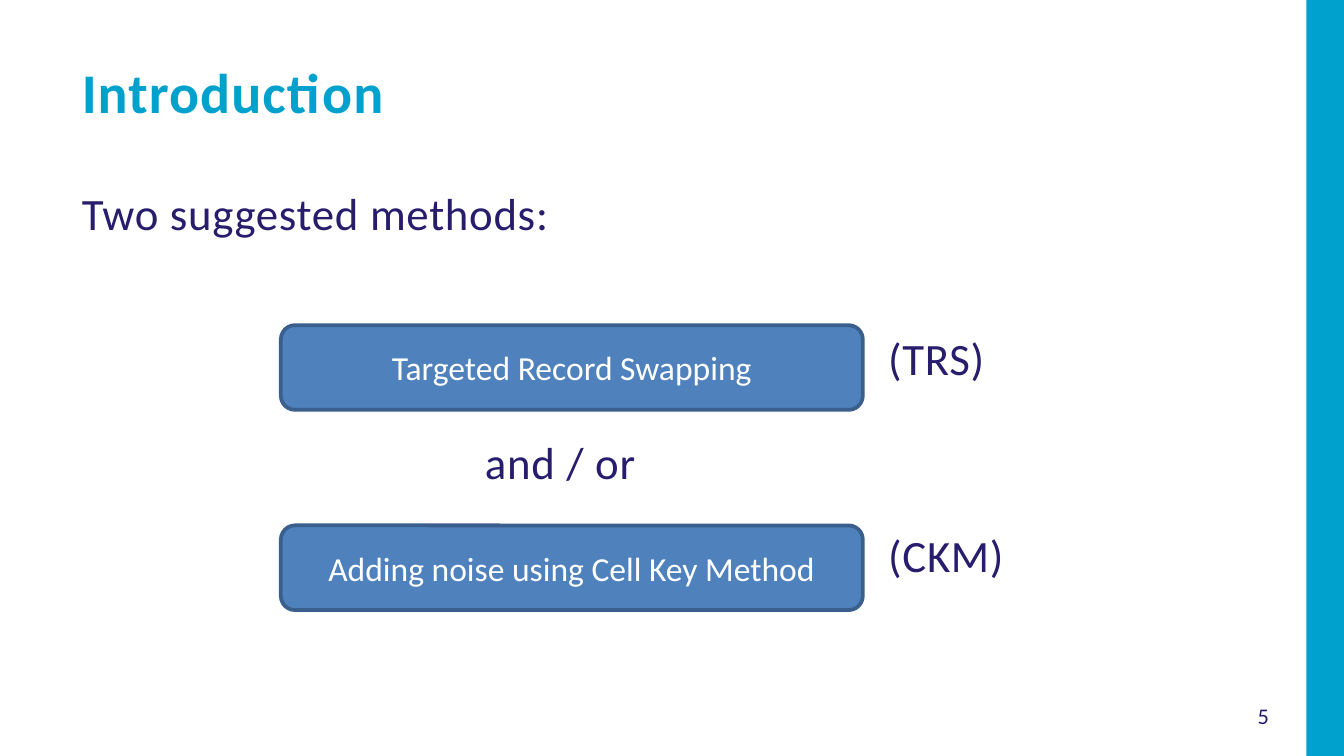
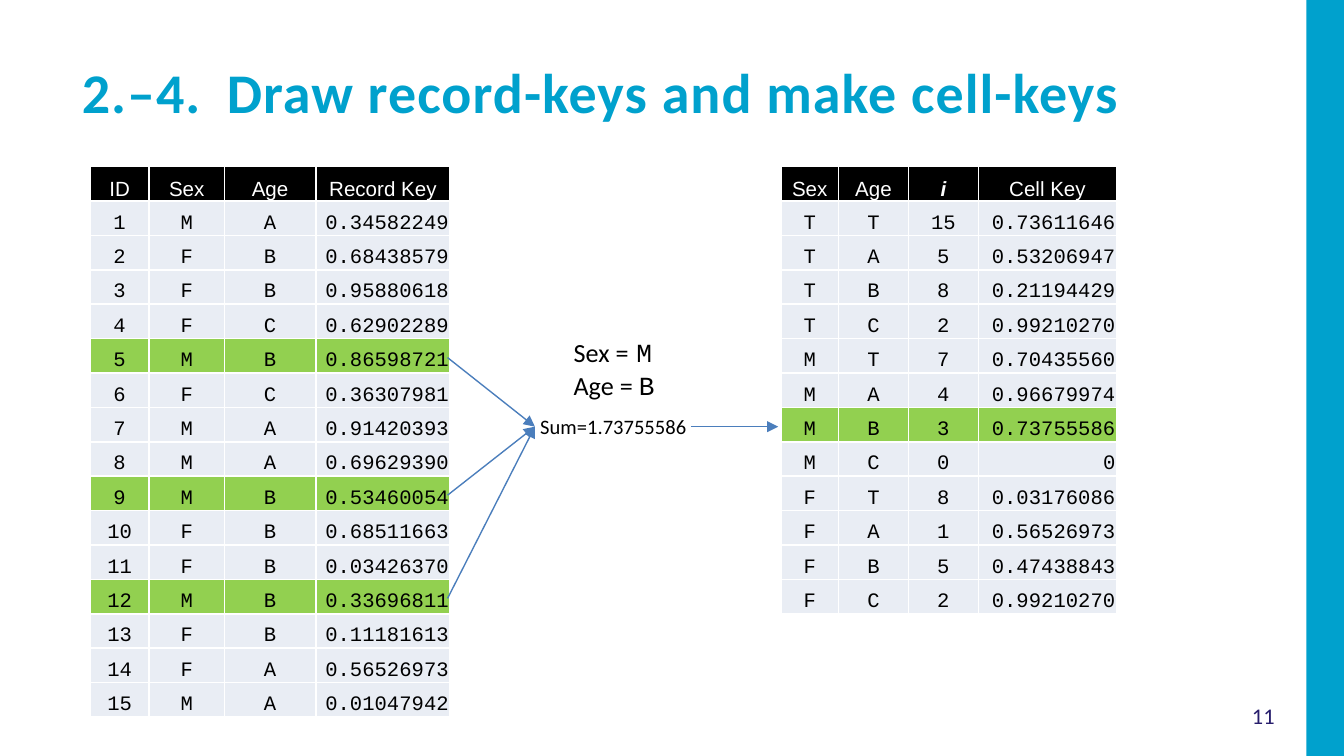
from dataclasses import dataclass

from lxml import etree
from pptx import Presentation
from pptx import util as u
from pptx.dml.color import RGBColor
from pptx.enum import shapes, text
from pptx.oxml import ns


@dataclass(frozen=True)
class Theme:
    cyan: str = "00A1CD"
    navy: str = "271D6C"
    blue: str = "4F81BD"
    blue_edge: str = "3A5F8C"
    arrow: str = "4B7EBC"
    pale: str = "E9EDF4"
    green: str = "92D050"
    white: str = "FFFFFF"
    black: str = "000000"
    body_font: str = "Calibri"
    head_font: str = "Arial"
    data_font: str = "Courier New"
    title: int = 30
    lead: int = 24
    box: int = 18
    note: int = 14
    page: int = 12
    data: int = 11


T = Theme()
WIDTH, HEIGHT = u.Inches(10), u.Inches(5.625)
COLUMNS = 100
UNIT = WIDTH // COLUMNS
FULL_ROWS = HEIGHT / UNIT
CENTER, LEFT, RIGHT = text.PP_ALIGN.CENTER, text.PP_ALIGN.LEFT, text.PP_ALIGN.RIGHT
TEXT_LEFT, TEXT_WIDTH = 5.1, 83.5
TABLE_TOP, ROW_HEIGHT = 12.4, 2.56

RECORDS = """
1 M A 0.34582249
2 F B 0.68438579
3 F B 0.95880618
4 F C 0.62902289
5 M B 0.86598721
6 F C 0.36307981
7 M A 0.91420393
8 M A 0.69629390
9 M B 0.53460054
10 F B 0.68511663
11 F B 0.03426370
12 M B 0.33696811
13 F B 0.11181613
14 F A 0.56526973
15 M A 0.01047942
"""
CELLS = """
T T 15 0.73611646
T A 5 0.53206947
T B 8 0.21194429
T C 2 0.99210270
M T 7 0.70435560
M A 4 0.96679974
M B 3 0.73755586
M C 0 0
F T 8 0.03176086
F A 1 0.56526973
F B 5 0.47438843
F C 2 0.99210270
"""


def grid(*cells):
    return [u.Emu(round(cell * UNIT)) for cell in cells]


def rgb(code):
    return RGBColor.from_string(code)


def write(paragraph, words, size, color=T.black, font=T.body_font, bold=False,
          italic=False, align=None, spacing=0, before=0, indent=0, tab=0):
    props = paragraph._p.get_or_add_pPr()
    if indent:
        props.set("marL", str(grid(indent)[0]))
    if tab:
        stops = etree.SubElement(props, ns.qn("a:tabLst"))
        etree.SubElement(stops, ns.qn("a:tab"), pos=str(grid(tab)[0]), algn="l")
    if align is not None:
        paragraph.alignment = align
    if before:
        paragraph.space_before = u.Pt(before)
    run = paragraph.add_run()
    run.text = words
    run.font.size = u.Pt(size)
    run.font.name = font
    run.font.bold = bold
    run.font.italic = italic
    run.font.color.rgb = rgb(color)
    if spacing:
        run._r.get_or_add_rPr().set("spc", str(round(spacing * 100)))


def text_area(slide, place, anchor=text.MSO_ANCHOR.TOP):
    area = slide.shapes.add_textbox(*grid(*place))
    area.text_frame.word_wrap = True
    area.text_frame.vertical_anchor = anchor
    return area


def filled(slide, preset, place, fill, edge=None):
    block = slide.shapes.add_shape(preset, *grid(*place))
    block.shadow.inherit = False
    block.fill.solid()
    block.fill.fore_color.rgb = rgb(fill)
    if edge:
        block.line.color.rgb = rgb(edge)
        block.line.width = u.Pt(2)
    else:
        block.line.fill.background()
    return block


def new_slide(deck, title, number, tab=0):
    slide = deck.slides.add_slide(deck.slide_layouts[6])
    filled(slide, shapes.MSO_SHAPE.RECTANGLE, (97.2, 0, 2.8, FULL_ROWS), T.cyan)
    page = text_area(slide, (90.8, 51.5, 6.4, 3.5), text.MSO_ANCHOR.MIDDLE)
    write(page.text_frame.paragraphs[0], str(number), T.page, T.navy, align=CENTER)
    heading = text_area(slide, (TEXT_LEFT, 3.8, TEXT_WIDTH, 6.3))
    write(heading.text_frame.paragraphs[0], title, T.title, T.cyan, bold=True,
          spacing=0.6, tab=tab)
    return slide


def method_box(slide, top, label):
    method = filled(slide, shapes.MSO_SHAPE.ROUNDED_RECTANGLE,
                    (20.9, top, 43.3, 6.3), T.blue, T.blue_edge)
    method.text_frame.vertical_anchor = text.MSO_ANCHOR.MIDDLE
    write(method.text_frame.paragraphs[0], label, T.box, T.white, align=CENTER)


def white_borders(cell):
    props = cell._tc.get_or_add_tcPr()
    for side in ("lnL", "lnR", "lnT", "lnB"):
        line = etree.SubElement(props, ns.qn(f"a:{side}"), w=str(u.Pt(1)))
        paint = etree.SubElement(line, ns.qn("a:solidFill"))
        etree.SubElement(paint, ns.qn("a:srgbClr"), val=T.white)


def table_cell(cell, words, fill, **style):
    white_borders(cell)
    cell.fill.solid()
    cell.fill.fore_color.rgb = rgb(fill)
    cell.margin_left = cell.margin_right = cell.margin_top = u.Inches(0.01)
    cell.margin_bottom = 0
    cell.vertical_anchor = text.MSO_ANCHOR.BOTTOM
    write(cell.text_frame.paragraphs[0], words, T.data, **style)


def key_table(slide, left, widths, header, listing, marked):
    rows = [line.split() for line in listing.strip().splitlines()]
    count = len(rows) + 1
    frame = slide.shapes.add_table(
        count, len(widths),
        *grid(left, TABLE_TOP, sum(widths), count * ROW_HEIGHT))
    table = frame.table
    table.horz_banding = False
    for column, width in zip(table.columns, grid(*widths)):
        column.width = width
    for row in table.rows:
        row.height = grid(ROW_HEIGHT)[0]
    for c, name in enumerate(header):
        symbol = name == "i"
        table_cell(table.cell(0, c), name, T.black, color=T.white,
                   font=T.head_font, bold=symbol, italic=symbol, align=CENTER)
    for r, values in enumerate(rows, 1):
        for c, value in enumerate(values):
            table_cell(table.cell(r, c), value, T.green if r in marked else T.pale,
                       font=T.data_font,
                       align=RIGHT if c == len(values) - 1 else CENTER)


def arrow(slide, start, end, source=None, target=None):
    link = slide.shapes.add_connector(shapes.MSO_CONNECTOR.STRAIGHT,
                                      *grid(*start, *end))
    if source is not None:
        link.begin_connect(source, 3)
    if target is not None:
        link.end_connect(target, 1)
    link.line.color.rgb = rgb(T.arrow)
    link.line.width = u.Pt(0.75)
    etree.SubElement(link.line._get_or_add_ln(), ns.qn("a:tailEnd"), type="triangle")
    etree.SubElement(link._element.spPr, ns.qn("a:effectLst"))


def introduction(deck):
    slide = new_slide(deck, "Introduction", 5)
    body = text_area(slide, (TEXT_LEFT, 13.3, TEXT_WIDTH, 37.8)).text_frame
    lines = [("Two suggested methods:", 0, 0), ("(TRS)", 60, 49),
             ("and / or", 30, 27), ("(CKM)", 60, 21)]
    for i, (words, indent, before) in enumerate(lines):
        paragraph = body.add_paragraph() if i else body.paragraphs[0]
        write(paragraph, words, T.lead, T.navy, spacing=0.4,
              indent=indent, before=before)
    method_box(slide, 24.2, "Targeted Record Swapping")
    method_box(slide, 39.1, "Adding noise using Cell Key Method")


def record_keys(deck):
    slide = new_slide(deck, "2.–4.\tDraw record-keys and make cell-keys", 11, tab=10.8)
    marked = (5, 9, 12)
    key_table(slide, 6.7, (4.4, 5.6, 6.8, 10), ("ID", "Sex", "Age", "Record Key"),
              RECORDS, marked)
    key_table(slide, 58.1, (4.3, 5.2, 5.2, 10.3), ("Sex", "Age", "i", "Cell Key"),
              CELLS, (7,))

    total = text_area(slide, (39.8, 30.3, 11.6, 2.9))
    total.text_frame.margin_left = u.Inches(0.04)
    total.text_frame.margin_right = 0
    write(total.text_frame.paragraphs[0], "Sum=1.73755586", T.data, align=LEFT)
    middle = 31.75
    for record in marked:
        record_middle = TABLE_TOP + (record + 0.55) * ROW_HEIGHT
        arrow(slide, (33.3, record_middle), (39.8, middle), target=total)
    arrow(slide, (51.4, middle), (57.9, middle), source=total)

    group = text_area(slide, (41.7, 24, 8.7, 6.4)).text_frame
    sex, age = group.paragraphs[0], group.add_paragraph()
    write(sex, "Sex =", T.note)
    write(sex, " ", T.box)
    write(sex, "M", T.note, font=T.data_font)
    write(age, "Age = ", T.note)
    write(age, "B", T.note, font=T.data_font)


def main():
    deck = Presentation()
    deck.slide_width, deck.slide_height = WIDTH, HEIGHT
    introduction(deck)
    record_keys(deck)
    deck.save("out.pptx")


if __name__ == "__main__":
    main()
